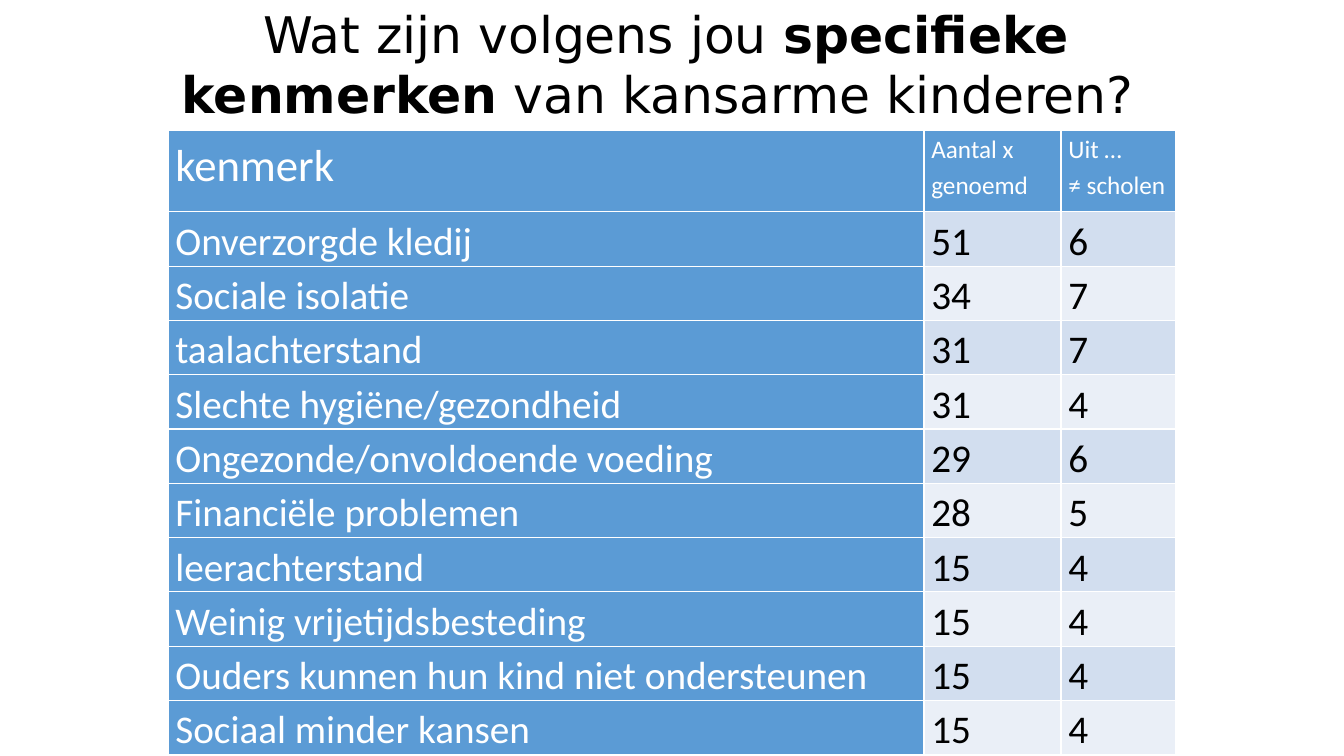
"""Build a slide with a table of characteristics named for disadvantaged children."""
from lxml.etree import SubElement
from pptx import Presentation
from pptx.dml.color import RGBColor
from pptx.enum.text import MSO_ANCHOR, PP_ALIGN
from pptx.oxml.ns import qn
from pptx.util import Pt

BLACK = RGBColor(0x00, 0x00, 0x00)
WHITE = RGBColor(0xFF, 0xFF, 0xFF)
BLUE = RGBColor(0x5B, 0x9B, 0xD5)
BAND_DARK = RGBColor(0xD2, 0xDE, 0xEF)
BAND_LIGHT = RGBColor(0xEA, 0xEF, 0xF7)

HEADER = ["kenmerk", "Aantal x genoemd", "Uit …\n≠ scholen"]
CHARACTERISTICS = [
    ("Onverzorgde kledij", 51, 6),
    ("Sociale isolatie", 34, 7),
    ("taalachterstand", 31, 7),
    ("Slechte hygiëne/gezondheid", 31, 4),
    ("Ongezonde/onvoldoende voeding", 29, 6),
    ("Financiële problemen", 28, 5),
    ("leerachterstand", 15, 4),
    ("Weinig vrijetijdsbesteding", 15, 4),
    ("Ouders kunnen hun kind niet ondersteunen", 15, 4),
    ("Sociaal minder kansen", 15, 4),
]
COLUMN_WIDTHS = [540, 97.92, 82.08]
HEADER_HEIGHT = 58.32
ROW_HEIGHT = 38.8


def add_text(paragraph, text, *, size, color, font="Calibri", bold=False):
    run = paragraph.add_run()
    run.text = text
    run.font.name = font
    run.font.size = Pt(size)
    run.font.bold = bold
    run.font.color.rgb = color


def style_cell(cell, fill):
    cell.margin_left = cell.margin_right = Pt(5.3)
    cell.margin_top = cell.margin_bottom = Pt(0)
    properties = cell._tc.get_or_add_tcPr()
    for side in ("lnL", "lnR", "lnT", "lnB"):
        border = SubElement(properties, qn(f"a:{side}"), w=str(Pt(1)))
        SubElement(SubElement(border, qn("a:solidFill")), qn("a:srgbClr"), val=str(WHITE))
    cell.fill.solid()
    cell.fill.fore_color.rgb = fill


presentation = Presentation()
presentation.slide_width = Pt(960)
presentation.slide_height = Pt(540)
slide = presentation.slides.add_slide(presentation.slide_layouts[6])

rows = [HEADER, *CHARACTERISTICS]
table_height = HEADER_HEIGHT + ROW_HEIGHT * len(CHARACTERISTICS)
table = slide.shapes.add_table(
    len(rows), len(HEADER), Pt(120), Pt(93), Pt(sum(COLUMN_WIDTHS)), Pt(table_height)
).table
for column, width in zip(table.columns, COLUMN_WIDTHS):
    column.width = Pt(width)

for row_index, values in enumerate(rows):
    is_header = row_index == 0
    table.rows[row_index].height = Pt(HEADER_HEIGHT if is_header else ROW_HEIGHT)
    band = BAND_DARK if row_index % 2 else BAND_LIGHT
    for column_index, value in enumerate(values):
        cell = table.cell(row_index, column_index)
        is_first = column_index == 0
        on_blue = is_header or is_first
        style_cell(cell, BLUE if on_blue else band)
        size = 28
        if is_header:
            size = 32 if is_first else 18
        for line_index, line in enumerate(str(value).split("\n")):
            frame = cell.text_frame
            paragraph = frame.add_paragraph() if line_index else frame.paragraphs[0]
            paragraph.line_spacing = 1.15 if is_header else 1.13
            add_text(paragraph, line, size=size, color=WHITE if on_blue else BLACK)

title = slide.shapes.add_textbox(Pt(120), Pt(-2), Pt(711.5), Pt(94.5))
title.text_frame.word_wrap = True
title.text_frame.vertical_anchor = MSO_ANCHOR.MIDDLE
paragraph = title.text_frame.paragraphs[0]
paragraph.alignment = PP_ALIGN.CENTER
for text, bold in [
    ("Wat zijn volgens jou ", False),
    ("specifieke kenmerken", True),
    (" van kansarme kinderen? ", False),
]:
    add_text(paragraph, text, size=36, color=BLACK, font="DejaVu Sans", bold=bold)

presentation.save("out.pptx")
